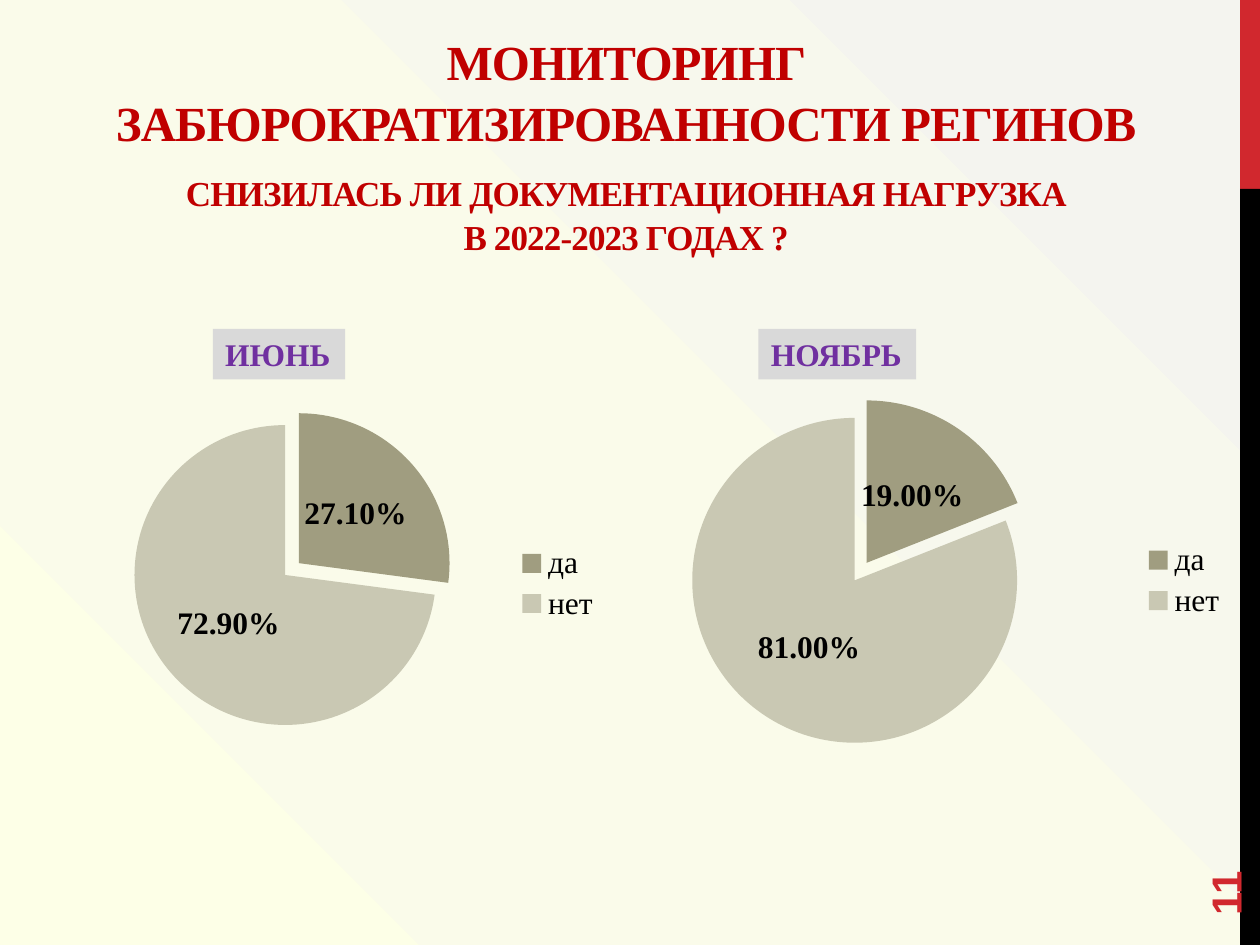
from lxml import etree
from pptx import Presentation
from pptx.chart.data import CategoryChartData
from pptx.dml.color import RGBColor
from pptx.enum import chart as ch, shapes, text
from pptx.oxml import parse_xml
from pptx.oxml.ns import nsdecls, qn
from pptx.util import Cm, Pt

COLORS = {
    "red": "D1282E", "black": "000000", "title": "C00000",
    "label": "7030A0", "label_bg": "D9D9D9",
    "yes": "A09D80", "no": "C9C8B3",
}
BACKGROUND = [(0, "FDFFE7"), (38, "FAFBEA"), (99, "F4F4EF")]
SERIF = "Times New Roman"


def rgb(name):
    return RGBColor.from_string(COLORS[name])


def style_font(font, size, color="black", bold=True, name=SERIF):
    font.size, font.bold, font.name = Pt(size), bold, name
    font.color.rgb = rgb(color)


def write(p, content, spacing=None, **fmt):
    """Add text to a paragraph, with line breaks at each newline."""
    for i, line in enumerate(content.split("\n")):
        if i:
            p.add_line_break()
        r = p.add_run()
        r.text = line
        style_font(r.font, **fmt)
        if spacing is not None:
            r.font._element.set("spc", str(spacing))


class SlideBuilder:
    def __init__(self, prs):
        self.s = prs.slides.add_slide(prs.slide_layouts[5])

    def background(self, stops):
        gs = "".join(f'<a:gs pos="{pos * 1000}"><a:srgbClr val="{c}"/></a:gs>'
                     for pos, c in stops)
        self.s.element.cSld.insert(0, parse_xml(
            f'<p:bg {nsdecls("p", "a")}><p:bgPr><a:gradFill rotWithShape="1">'
            f'<a:gsLst>{gs}</a:gsLst><a:path path="circle">'
            '<a:fillToRect t="100000" r="100000"/></a:path></a:gradFill>'
            '<a:effectLst/></p:bgPr></p:bg>'))

    def rect(self, box, fill):
        sp = self.s.shapes.add_shape(shapes.MSO_SHAPE.RECTANGLE, *map(Cm, box))
        sp.shadow.inherit = False
        sp.fill.solid()
        sp.fill.fore_color.rgb = rgb(fill)
        sp.line.fill.background()
        return sp

    def label(self, box, content):
        tf = self.rect(box, "label_bg").text_frame
        tf.word_wrap = False
        tf.auto_size = text.MSO_AUTO_SIZE.SHAPE_TO_FIT_TEXT
        tf.paragraphs[0].alignment = text.PP_ALIGN.LEFT
        write(tf.paragraphs[0], content, size=18, color="label")

    def title(self, box, heading, question):
        sp = self.s.shapes.title
        sp.left, sp.top, sp.width, sp.height = map(Cm, box)
        tf = sp.text_frame
        tf.word_wrap = True
        tf.auto_size = text.MSO_AUTO_SIZE.NONE
        tf.vertical_anchor = text.MSO_ANCHOR.BOTTOM
        for p, content, size, gap in (
                (tf.paragraphs[0], heading, 28, 0),
                (tf.add_paragraph(), question, 20, 11)):
            p.alignment = text.PP_ALIGN.CENTER
            p.line_spacing = 1.03
            p.space_before = Pt(gap)
            write(p, content, size=size, color="title", spacing=-50)

    def page_number(self, box, number):
        sp = self.s.shapes.add_textbox(*map(Cm, box))
        sp.rotation = 270
        tf = sp.text_frame
        tf.word_wrap = True
        tf.vertical_anchor = text.MSO_ANCHOR.MIDDLE
        write(tf.paragraphs[0], number, size=24, color="red", name="Arial")

    def pie(self, box, values, explosion, plot_area=None):
        data = CategoryChartData(number_format="0.00%")
        data.categories = ["да", "нет"]
        data.add_series("Series 1", values)
        chart = self.s.shapes.add_chart(
            ch.XL_CHART_TYPE.PIE, *map(Cm, box), data).chart
        chart.has_title = False
        style_font(chart.font, 18)
        chart.has_legend = True
        chart.legend.position = ch.XL_LEGEND_POSITION.RIGHT
        chart.legend.include_in_layout = False
        style_font(chart.legend.font, 18, bold=False)

        plot = chart.plots[0]
        plot.vary_by_categories = True
        plot.has_data_labels = True
        labels = plot.data_labels
        labels.show_value, labels.show_percentage = True, False
        labels.number_format, labels.number_format_is_linked = "0.00%", False
        labels.position = ch.XL_LABEL_POSITION.CENTER
        style_font(labels.font, 18)

        ser = plot.series[0]
        for i, name in enumerate(("yes", "no")):
            fmt = ser.points[i].format
            fmt.fill.solid()
            fmt.fill.fore_color.rgb = rgb(name)
            fmt.line.fill.background()
        # Pull the first slice out
        first = ser._element.find(qn("c:dPt"))
        pull = etree.Element(qn("c:explosion"), val=str(explosion))
        first.find(qn("c:spPr")).addprevious(pull)

        if plot_area:
            self.place_plot(chart, plot_area)

    def place_plot(self, chart, area):
        modes = "".join(f'<c:{k}Mode val="edge"/>' for k in "xy")
        sizes = "".join(f'<c:{k} val="{v}"/>' for k, v in zip("xywh", area))
        plot_area = chart._chartSpace.chart.plotArea
        for old in plot_area.findall(qn("c:layout")):
            plot_area.remove(old)
        plot_area.insert(0, parse_xml(
            f'<c:layout {nsdecls("c")}><c:manualLayout>'
            f'<c:layoutTarget val="inner"/>{modes}{sizes}'
            '</c:manualLayout></c:layout>'))


def main():
    prs = Presentation()
    prs.slide_width, prs.slide_height = Cm(25.4), Cm(19.05)
    slide = SlideBuilder(prs)

    # Background and side strip
    slide.background(BACKGROUND)
    slide.rect((25, 0, 0.4, 3.81), "red")
    slide.rect((25, 3.81, 0.4, 15.24), "black")

    # Title and page number
    slide.title((1.19, 1.12, 22.86, 4.19),
                "МОНИТОРИНГ ЗАБЮРОКРАТИЗИРОВАННОСТИ РЕГИНОВ",
                "СНИЗИЛАСЬ ЛИ ДОКУМЕНТАЦИОННАЯ НАГРУЗКА\nВ 2022-2023 ГОДАХ ?")
    slide.page_number((22.86, 16.36, 3.66, 1.02), "11")

    # Survey results by month
    slide.pie((0.86, 8.33, 11.51, 6.83), (0.271, 0.729), 12,
              plot_area=(0.16, 0.03, 0.53, 0.89))
    slide.pie((11.51, 7.65, 13.49, 8.1), (0.19, 0.81), 13)
    slide.label((4.29, 6.63, 2.67, 1.02), "ИЮНЬ")
    slide.label((15.29, 6.63, 3.18, 1.02), "НОЯБРЬ")

    prs.save("out.pptx")


if __name__ == "__main__":
    main()
